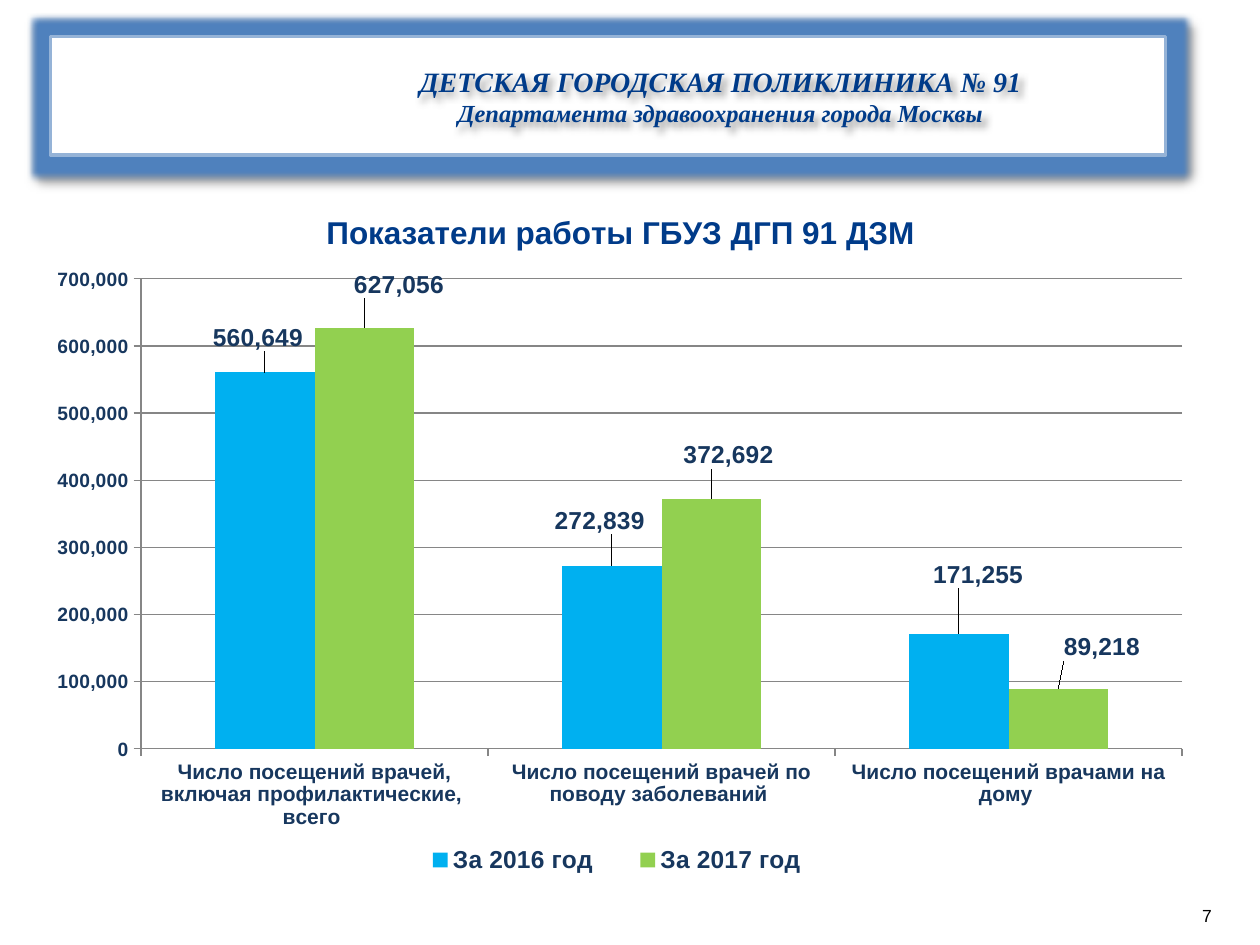
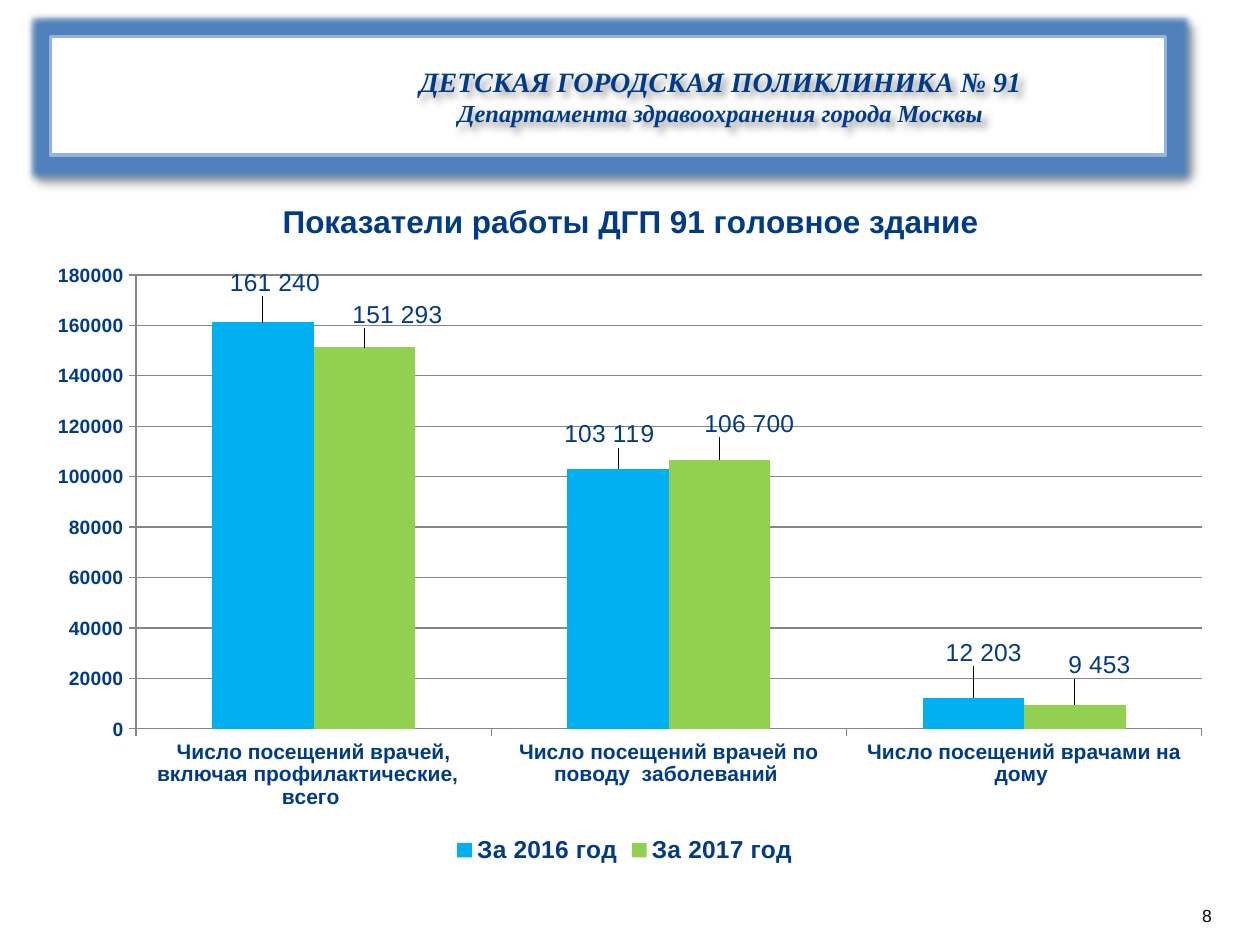
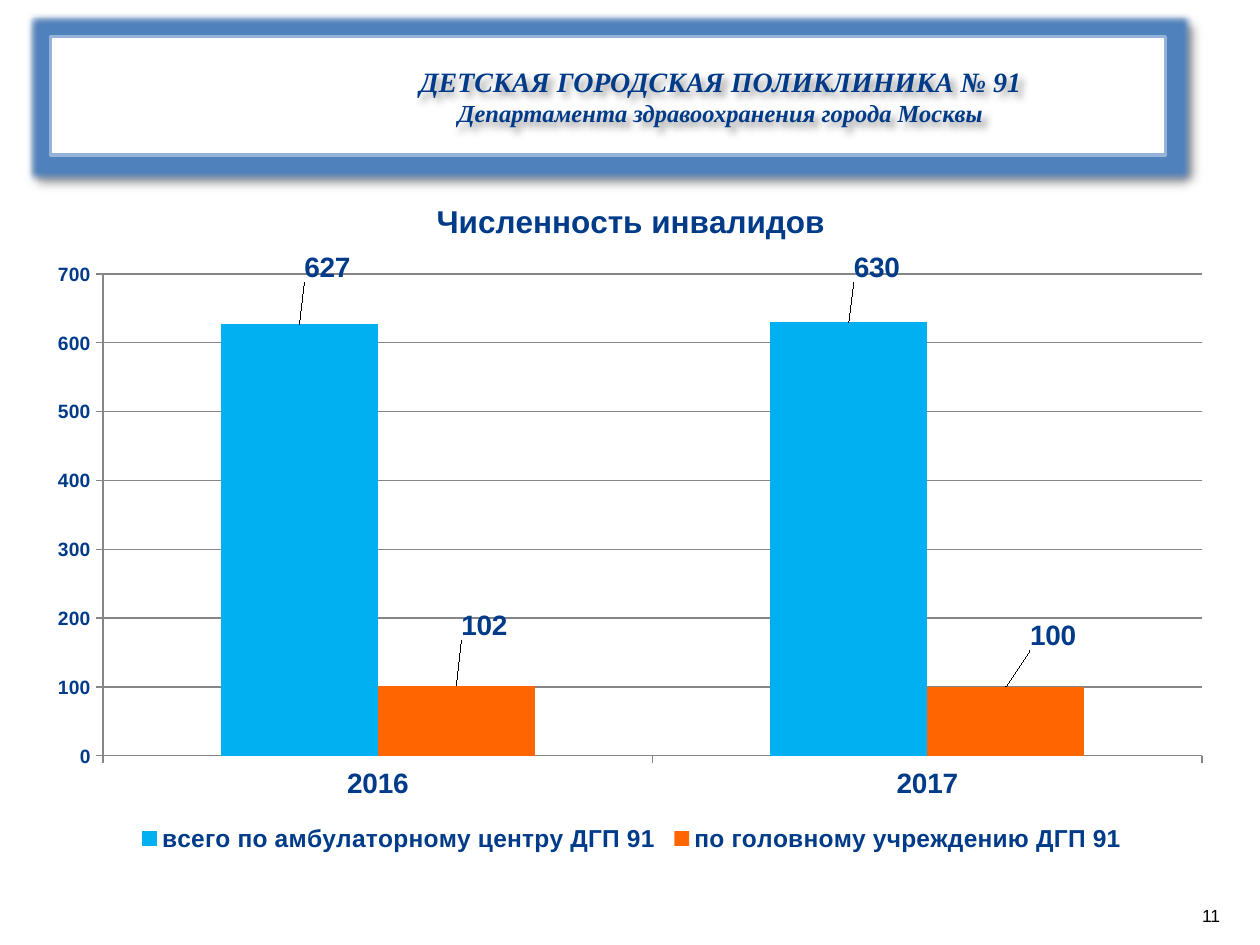
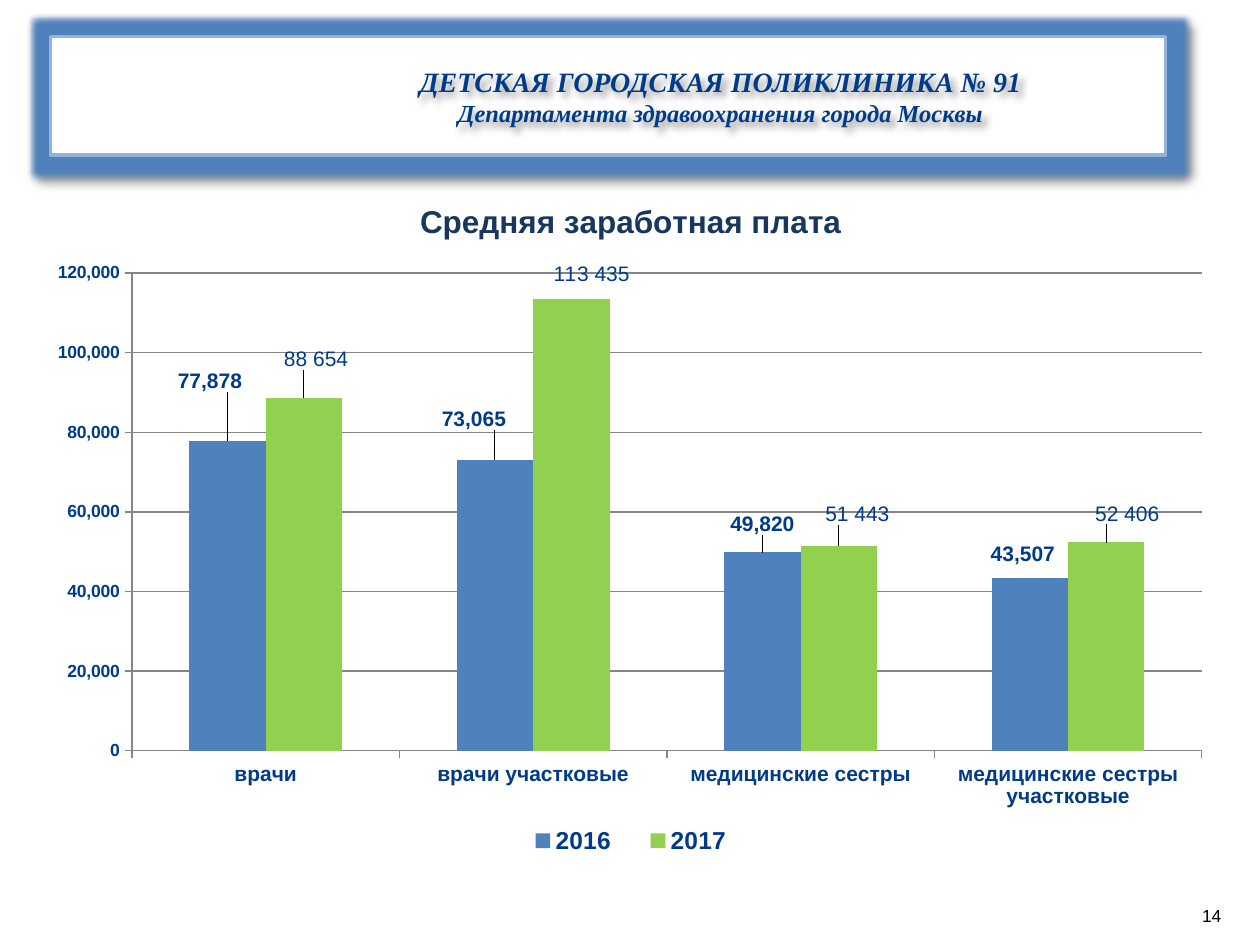
from dataclasses import dataclass
from itertools import chain

from lxml import etree
from pptx import Presentation
from pptx.chart.data import CategoryChartData
from pptx.dml.color import RGBColor
from pptx.enum import chart as charts, shapes, text
from pptx.oxml import parse_xml
from pptx.oxml.ns import nsdecls, qn
from pptx.util import Pt

COLORS = {
    "navy": "003B89", "ink": "17375E", "black": "000000", "white": "FFFFFF",
    "frame": "95B3D7", "glow": "4F81BD", "grid": "868686",
    "sky": "00B0F0", "green": "92D050", "orange": "FF6600", "steel": "4F81BD",
}
SANS, SERIF = "Arial", "Times New Roman"
THOUSANDS = "#,##0"
BANNER = [("ДЕТСКАЯ ГОРОДСКАЯ ПОЛИКЛИНИКА № 91", 16),
          ("Департамента здравоохранения города Москвы", 14)]
VISITS = "Число посещений "


@dataclass
class Bars:
    """One series; shifts are label offsets in points, texts replace values."""
    name: str
    values: list
    color: str
    shifts: list
    texts: list = None


@dataclass
class ColumnPage:
    number: int
    title: str
    frame: tuple
    plot: tuple
    legend: tuple
    top_value: int
    step: int
    categories: list
    series: list
    title_color: str = "navy"
    ink: str = "navy"
    number_format: str = "General"
    category_size: int = 12
    value_size: int = 11
    label_size: int = 14


PAGES = [
    ColumnPage(
        7, "Показатели работы ГБУЗ ДГП 91 ДЗМ", (20.2, 105.8, 668.9, 402.5),
        (80.6, 159.4, 594.9, 268.6), (229, 480, 251, 23), 700000, 100000,
        [VISITS + "врачей, включая профилактические,  всего ",
         VISITS + "врачей по поводу заболеваний ", VISITS + "врачами на дому "],
        [Bars("За 2016 год ", [560649, 272839, 171255], "sky",
              [(-4, -9), (-7, -15), (11, -23)]),
         Bars("За 2017 год ", [627056, 372692, 89218], "green",
              [(20, -14), (10, -14), (25, -13)])],
        ink="ink", number_format=THOUSANDS),
    ColumnPage(
        8, "Показатели работы ДГП 91 головное здание", (20.2, 100, 680.4, 396.7),
        (77.7, 157.1, 609.1, 259.4), (257, 475, 204, 22), 180000, 20000,
        [VISITS + "врачей, включая профилактические,   всего ",
         VISITS + "врачей по поводу  заболеваний ", VISITS + "врачами на дому "],
        [Bars("За 2016 год ", [161240, 103119, 12203], "sky",
              [(7, -12), (-5, -9), (6, -15)], ["161 240", "103 119", "12 203"]),
         Bars("За 2017 год ", [151293, 106700, 9453], "green",
              [(19, -8), (17, -10), (14, -12)], ["151 293", "106 700", "9 453"])]),
    ColumnPage(
        11, "Численность инвалидов", (20.2, 100, 680.4, 391),
        (58.9, 156.6, 628, 275.4), (75, 470, 572, 22), 700, 100,
        ["2016", "2017"],
        [Bars("всего по амбулаторному центру ДГП 91", [627, 630], "sky",
              [(16, -21), (16, -20)]),
         Bars("по головному учреждению ДГП 91", [102, 100], "orange",
              [(16, -23), (27, -18)])],
        category_size=16, label_size=16),
    ColumnPage(
        14, "Средняя заработная плата", (20.2, 100, 680.4, 396.7),
        (75.4, 156, 611.4, 273.1), (288, 469, 145, 23), 120000, 20000,
        ["врачи", "врачи участковые", "медицинские сестры",
         "медицинские сестры участковые"],
        [Bars("2016", [77878, 73065, 49820, 43507], "steel",
              [(-10, -25), (-12, -14), (0, -7), (-4, -4)]),
         Bars("2017", [88654, 113435, 51443, 52406], "green",
              [(7, -13), (10, -5), (9, -9), (12, -7)],
              ["88 654", " 113 435", " 51 443", "52 406"])],
        title_color="ink", number_format=THOUSANDS, value_size=10, label_size=12),
]


def rgb(name):
    return RGBColor.from_string(COLORS[name])


def set_font(font, size, color, bold=False, face=SANS):
    font.size, font.bold, font.name = Pt(size), bold, face
    font.color.rgb = rgb(color)


def add_effects(shape, glow=0):
    """Give a shape a soft lower-right shadow and, if wanted, a glow."""
    halo = (f'<a:glow rad="{Pt(glow)}"><a:srgbClr val="{COLORS["glow"]}"/></a:glow>'
            if glow else "")
    shape.element.spPr.append(parse_xml(
        f'<a:effectLst {nsdecls("a")}>{halo}<a:outerShdw blurRad="{Pt(4)}" '
        f'dist="{Pt(3)}" dir="2700000" algn="tl" rotWithShape="0">'
        f'<a:srgbClr val="{COLORS["black"]}"><a:alpha val="40000"/></a:srgbClr>'
        '</a:outerShdw></a:effectLst>'))


def add_banner(page, master):
    """Build the banner on a page, then move it to the master for all pages."""
    banner = page.shapes.add_group_shape()
    plate = banner.shapes.add_shape(
        shapes.MSO_SHAPE.RECTANGLE, Pt(28.8), Pt(20.9), Pt(637.2), Pt(67.7))
    plate.fill.solid()
    plate.fill.fore_color.rgb = rgb("white")
    plate.line.color.rgb = rgb("frame")
    plate.line.width = Pt(2)
    add_effects(plate, glow=8)

    box = banner.shapes.add_textbox(Pt(105.1), Pt(15.1), Pt(613.4), Pt(79.9))
    add_effects(box)
    frame = box.text_frame
    frame.word_wrap = True
    frame.vertical_anchor = text.MSO_ANCHOR.MIDDLE
    frame.text = "\n".join(line for line, size in BANNER)
    for para, (line, size) in zip(frame.paragraphs, BANNER):
        para.alignment = text.PP_ALIGN.CENTER
        font = para.runs[0].font
        set_font(font, size, "navy", True, SERIF)
        font.italic = True

    for number, item in enumerate(banner.element.iter(qn("p:cNvPr")), 20):
        item.set("id", str(number))
    master.shapes.element.append(banner.element)


def add_page_number(page, number):
    box = page.shapes.add_textbox(Pt(686.9), Pt(517), Pt(16.6), Pt(12.2))
    frame = box.text_frame
    frame.margin_left = frame.margin_right = frame.margin_top = frame.margin_bottom = 0
    frame.word_wrap = False
    frame.vertical_anchor = text.MSO_ANCHOR.MIDDLE
    frame.text = str(number)
    set_font(frame.paragraphs[0].runs[0].font, 10, "black")


def manual_layout(**settings):
    layout = etree.Element(qn("c:layout"))
    manual = etree.SubElement(layout, qn("c:manualLayout"))
    for name, value in settings.items():
        etree.SubElement(manual, qn("c:" + name)).set("val", str(value))
    return layout


def framed_layout(area, frame, **target):
    """Place a chart part at a slide area, as fractions of the chart frame."""
    left, top, width, height = frame
    return manual_layout(
        **target, xMode="edge", yMode="edge",
        x=round((area[0] - left) / width, 4), y=round((area[1] - top) / height, 4),
        w=round(area[2] / width, 4), h=round(area[3] / height, 4))


def replace_layout(parent, layout, index):
    for old in parent.findall(qn("c:layout")):
        parent.remove(old)
    parent.insert(index, layout)


def format_axis(axis, size, color):
    set_font(axis.tick_labels.font, size, color, True)
    axis.format.line.color.rgb = rgb("grid")
    axis.major_tick_mark = charts.XL_TICK_MARK.OUTSIDE
    axis.minor_tick_mark = charts.XL_TICK_MARK.NONE


def format_series(series, bars, content):
    series.format.fill.solid()
    series.format.fill.fore_color.rgb = rgb(bars.color)
    labels = series.data_labels
    labels.show_value = True
    labels.number_format = content.number_format
    labels.number_format_is_linked = False
    labels.position = charts.XL_LABEL_POSITION.OUTSIDE_END
    set_font(labels.font, content.label_size, content.ink, True)
    for index in range(len(bars.values)):
        label = series.points[index].data_label
        if bars.texts:
            label.text_frame.text = bars.texts[index]
            span = label.text_frame.paragraphs[0].runs[0]
            set_font(span.font, content.label_size, content.ink)
        else:
            set_font(label.font, content.label_size, content.ink, True)
        label.position = charts.XL_LABEL_POSITION.OUTSIDE_END


def add_columns(page, content):
    data = CategoryChartData(number_format=content.number_format)
    data.categories = content.categories
    for bars in content.series:
        data.add_series(bars.name, bars.values)
    chart = page.shapes.add_chart(
        charts.XL_CHART_TYPE.COLUMN_CLUSTERED, *map(Pt, content.frame), data).chart
    set_font(chart.font, 10, content.ink)

    chart.has_title = True
    chart.chart_title.text_frame.text = content.title
    title = chart.chart_title.text_frame.paragraphs[0].runs[0]
    set_font(title.font, 18, content.title_color, True)

    chart.has_legend = True
    chart.legend.position = charts.XL_LEGEND_POSITION.BOTTOM
    chart.legend.include_in_layout = False
    set_font(chart.legend.font, 14, content.ink, True)

    format_axis(chart.category_axis, content.category_size, content.ink)
    axis = chart.value_axis
    format_axis(axis, content.value_size, content.ink)
    axis.minimum_scale, axis.maximum_scale = 0, content.top_value
    axis.major_unit = content.step
    axis.major_gridlines.format.line.color.rgb = rgb("grid")
    axis.tick_labels.number_format = content.number_format
    axis.tick_labels.number_format_is_linked = False

    plot = chart.plots[0]
    plot.gap_width, plot.overlap, plot.vary_by_categories = 150, 0, False
    for series, bars in zip(plot.series, content.series):
        format_series(series, bars, content)
    place_parts(chart, content)


def place_parts(chart, content):
    root, frame = chart.element, content.frame
    replace_layout(next(root.iter(qn("c:plotArea"))),
                   framed_layout(content.plot, frame, layoutTarget="inner"), 0)
    replace_layout(next(root.iter(qn("c:legend"))),
                   framed_layout(content.legend, frame), 1)
    shifts = chain.from_iterable(bars.shifts for bars in content.series)
    for label, (right, down) in zip(root.iter(qn("c:dLbl")), shifts):
        replace_layout(label, manual_layout(x=round(right / frame[2], 4),
                                            y=round(down / frame[3], 4)), 1)


def main():
    deck = Presentation()
    deck.slide_width, deck.slide_height = Pt(720), Pt(540)
    blank = deck.slide_layouts[6]
    for content in PAGES:
        page = deck.slides.add_slide(blank)
        if content is PAGES[0]:
            add_banner(page, deck.slide_master)
        add_page_number(page, content.number)
        add_columns(page, content)
    deck.save("out.pptx")


if __name__ == "__main__":
    main()
